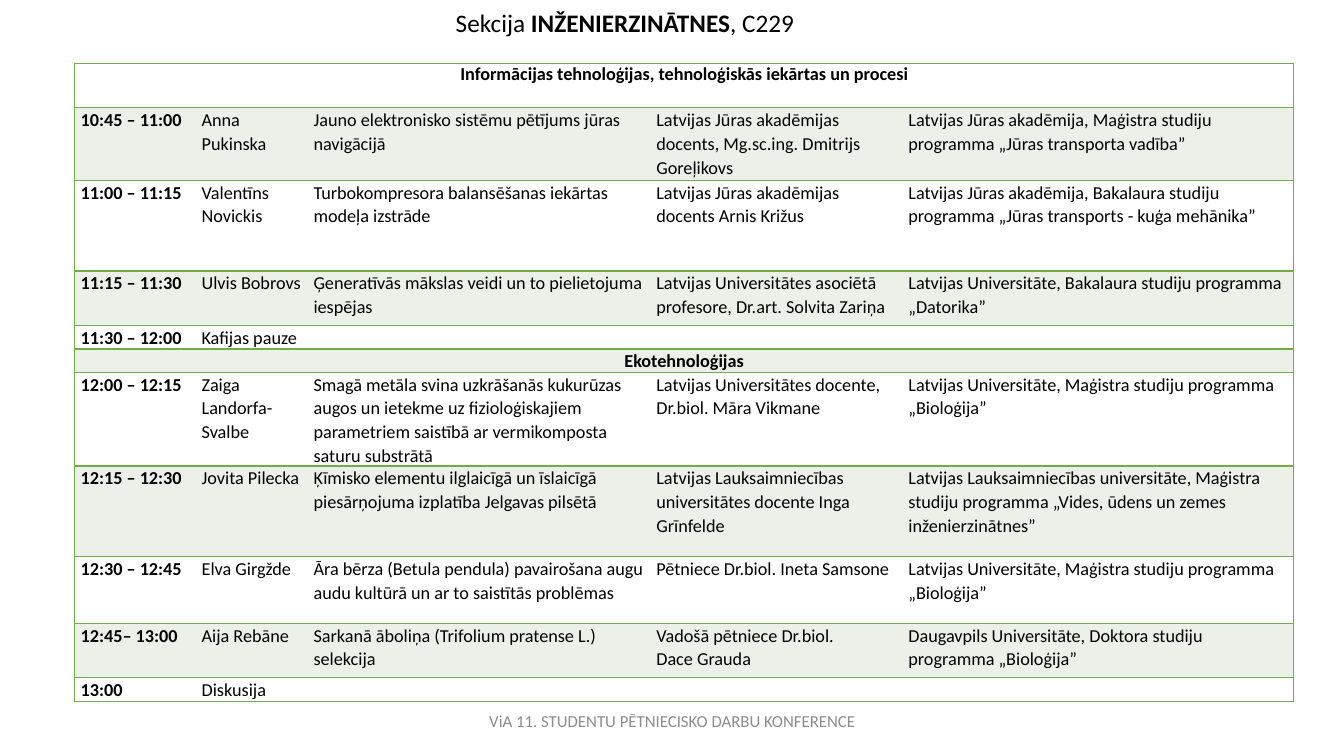
from dataclasses import dataclass

from lxml.etree import SubElement
from pptx import Presentation
from pptx.dml.color import RGBColor
from pptx.enum.text import MSO_ANCHOR, MSO_AUTO_SIZE, PP_ALIGN
from pptx.oxml.ns import qn
from pptx.util import Inches, Pt


@dataclass(frozen=True)
class Theme:
    font: str = "Calibri"
    ink: str = "000000"
    muted: str = "8C8C8C"
    border: str = "70AD47"
    band: str = "EBF1E9"
    plain: str = "FFFFFF"
    title_size: int = 18
    table_size: int = 13
    footer_size: int = 12
    border_width: int = 1
    line_spacing: float = 1.07


theme = Theme()


def format_run(run, size, color, bold=False):
    values = {"name": theme.font, "size": Pt(size), "bold": bold}
    for name, value in values.items():
        setattr(run.font, name, value)
    run.font.color.rgb = RGBColor.from_string(color)


def draw_borders(cell, sides):
    properties = cell._tc.get_or_add_tcPr()
    for side in sides:
        line = SubElement(properties, qn(f"a:ln{side}"), w=str(Pt(theme.border_width)))
        fill = SubElement(line, qn("a:solidFill"))
        SubElement(fill, qn("a:srgbClr"), val=theme.border)


# Slide
presentation = Presentation()
presentation.slide_width = Inches(13.33)
presentation.slide_height = Inches(7.5)
slide = presentation.slides.add_slide(presentation.slide_layouts[5])

# Title
title = slide.shapes.title
title_box = {"left": 4.42, "top": 0.02, "width": 3.59, "height": 0.4}
for name, value in title_box.items():
    setattr(title, name, Inches(value))
title_frame = {
    "word_wrap": False,
    "auto_size": MSO_AUTO_SIZE.SHAPE_TO_FIT_TEXT,
    "vertical_anchor": MSO_ANCHOR.TOP,
}
for name, value in title_frame.items():
    setattr(title.text_frame, name, value)
paragraph = title.text_frame.paragraphs[0]
paragraph.alignment = PP_ALIGN.LEFT
for text, bold in [("Sekcija ", False), ("INŽENIERZINĀTNES", True), (", C229", False)]:
    run = paragraph.add_run()
    run.text = text
    format_run(run, theme.title_size, theme.ink, bold)

# Programme: row height, then cell texts; the last text spans the remaining columns
programme = [
    (0.44, ["Informācijas tehnoloģijas, tehnoloģiskās iekārtas un procesi"]),
    (0.72, ["10:45 – 11:00", "Anna Pukinska",
            "Jauno elektronisko sistēmu pētījums jūras navigācijā",
            "Latvijas Jūras akadēmijas docents, Mg.sc.ing. Dmitrijs Goreļikovs",
            "Latvijas Jūras akadēmija, Maģistra studiju programma „Jūras transporta vadība”"]),
    (0.9, ["11:00 – 11:15", "Valentīns Novickis",
           "Turbokompresora balansēšanas iekārtas modeļa izstrāde",
           "Latvijas Jūras akadēmijas docents Arnis Križus",
           "Latvijas Jūras akadēmija, Bakalaura studiju programma "
           "„Jūras transports - kuģa mehānika”"]),
    (0.54, ["11:15 – 11:30", "Ulvis Bobrovs",
            "Ģeneratīvās mākslas veidi un to pielietojuma iespējas",
            "Latvijas Universitātes asociētā profesore, Dr.art. Solvita Zariņa",
            "Latvijas Universitāte, Bakalaura studiju programma „Datorika”"]),
    (0.23, ["11:30 – 12:00", "Kafijas pauze"]),
    (0.23, ["Ekotehnoloģijas"]),
    (0.93, ["12:00 – 12:15", "Zaiga Landorfa-Svalbe",
            "Smagā metāla svina uzkrāšanās kukurūzas augos un ietekme uz fizioloģiskajiem "
            "parametriem saistībā ar vermikomposta saturu substrātā",
            "Latvijas Universitātes docente, Dr.biol. Māra Vikmane",
            "Latvijas Universitāte, Maģistra studiju programma „Bioloģija”"]),
    (0.9, ["12:15 – 12:30", "Jovita Pilecka",
           "Ķīmisko elementu ilglaicīgā un īslaicīgā piesārņojuma izplatība Jelgavas pilsētā",
           "Latvijas Lauksaimniecības universitātes docente Inga Grīnfelde",
           "Latvijas Lauksaimniecības universitāte, Maģistra studiju programma "
           "„Vides, ūdens un zemes inženierzinātnes”"]),
    (0.66, ["12:30 – 12:45", "Elva Girgžde",
            "Āra bērza (Betula pendula) pavairošana augu audu kultūrā "
            "un ar to saistītās problēmas",
            "Pētniece Dr.biol. Ineta Samsone",
            "Latvijas Universitāte, Maģistra studiju programma „Bioloģija”"]),
    (0.54, ["12:45– 13:00", "Aija Rebāne",
            "Sarkanā āboliņa (Trifolium pratense L.) selekcija",
            "Vadošā pētniece Dr.biol.\nDace Grauda",
            "Daugavpils Universitāte, Doktora studiju programma „Bioloģija”"]),
    (0.23, ["13:00", "Diskusija"]),
]
column_widths = [1.2, 1.11, 3.4, 2.5, 3.88]
last_column = len(column_widths) - 1
second_section = 5

# Table frame without a built-in style
table = slide.shapes.add_table(
    len(programme), len(column_widths), Inches(0.74), Inches(0.63),
    Inches(sum(column_widths)), Inches(sum(height for height, _ in programme)),
).table
table.first_row = table.horz_banding = False
style = table._tbl.tblPr.find(qn("a:tableStyleId"))
style.text = "{2D5ABB26-0587-4C30-8999-92F81FD0307C}"
for column, width in zip(table.columns, column_widths):
    column.width = Inches(width)

# Table cells
margins = {"margin_left": 0.06, "margin_right": 0.06, "margin_top": 0, "margin_bottom": 0}
for row_index, (height, texts) in enumerate(programme):
    table.rows[row_index].height = Inches(height)
    last_text = len(texts) - 1
    if last_text < last_column:
        table.cell(row_index, last_text).merge(table.cell(row_index, last_column))
    for column_index in range(len(column_widths)):
        cell = table.cell(row_index, column_index)
        sides = ["L"] if column_index == 0 else []
        sides += ["R"] if column_index >= last_text else []
        draw_borders(cell, sides + ["T", "B"])
        cell.fill.solid()
        cell.fill.fore_color.rgb = RGBColor.from_string(
            theme.band if row_index % 2 else theme.plain)
        for name, value in margins.items():
            setattr(cell, name, Inches(value))
        if column_index > last_text:
            continue
        cell.text_frame.text = texts[column_index]
        for paragraph in cell.text_frame.paragraphs:
            paragraph.line_spacing = theme.line_spacing if row_index else 1.0
            if last_text == 0:
                paragraph.alignment = PP_ALIGN.CENTER
            elif column_index == 0 and row_index < second_section:
                paragraph.alignment = PP_ALIGN.JUSTIFY
            else:
                paragraph.alignment = PP_ALIGN.LEFT
            format_run(paragraph.runs[0], theme.table_size, theme.ink, column_index == 0)

# Footer
footer = slide.shapes.add_textbox(Inches(4.42), Inches(6.95), Inches(4.5), Inches(0.4))
footer.text_frame.word_wrap = True
footer.text_frame.vertical_anchor = MSO_ANCHOR.MIDDLE
paragraph = footer.text_frame.paragraphs[0]
paragraph.alignment = PP_ALIGN.CENTER
run = paragraph.add_run()
run.text = "ViA 11. STUDENTU PĒTNIECISKO DARBU KONFERENCE"
format_run(run, theme.footer_size, theme.muted)

presentation.save("out.pptx")
